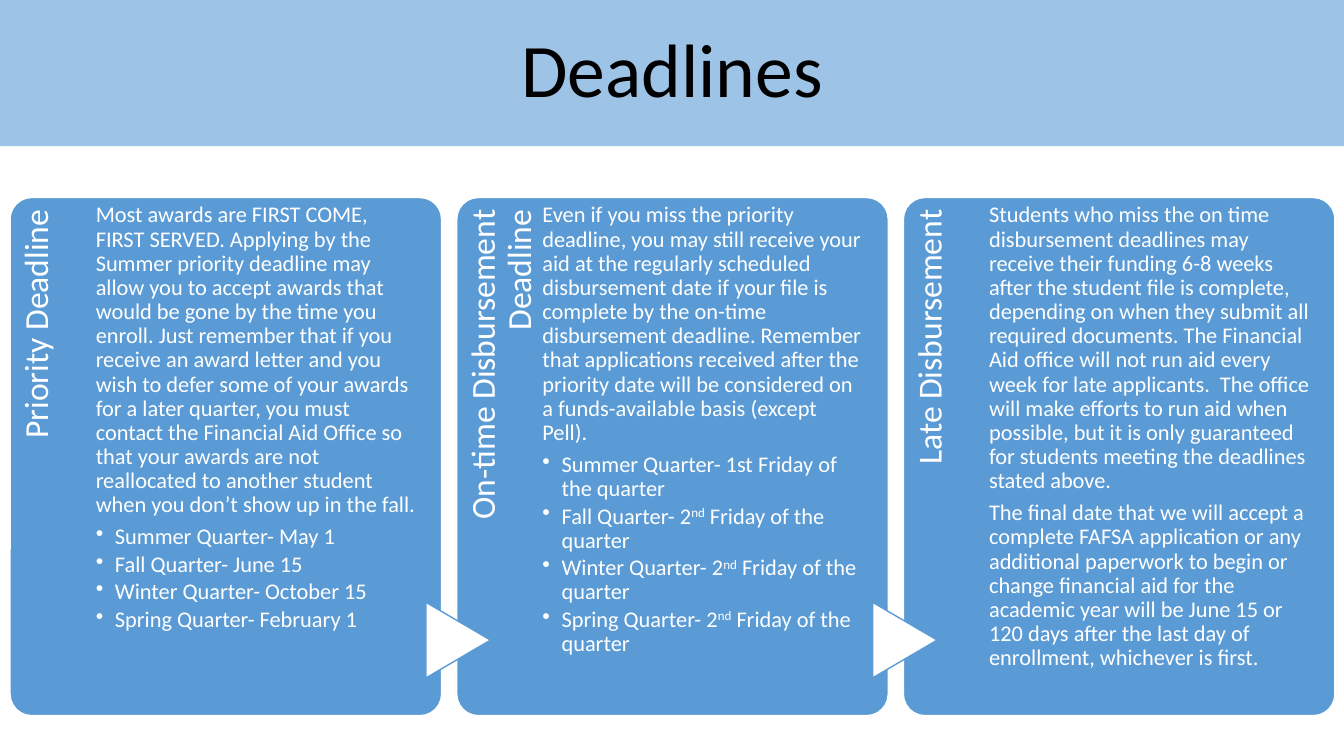
import pptx
import pptx.dml.color
import pptx.enum.shapes
import pptx.enum.text
import pptx.oxml
import pptx.oxml.ns
import pptx.util

PX = 9144
FONT = "Calibri"
BLUE, PALE_BLUE, WHITE, BLACK = "5B9BD5", "9DC3E6", "FFFFFF", "000000"
SHAPE = pptx.enum.shapes.MSO_SHAPE
ALIGN = pptx.enum.text.PP_ALIGN
ANCHOR = pptx.enum.text.MSO_ANCHOR

PANEL_LEFT, PANEL_TOP, PANEL_WIDTH, PANEL_HEIGHT, PANEL_STEP = 10, 196, 428, 514, 443

PANELS = [
    ("Priority Deadline", [
        "Most awards are FIRST COME, FIRST SERVED. Applying by the Summer priority deadline "
        "may allow you to accept awards that would be gone by the time you enroll. Just "
        "remember that if you receive an award letter and you wish to defer some of your "
        "awards for a later quarter, you must contact the Financial Aid Office so that your "
        "awards are not reallocated to another student when you don’t show up in the fall.",
    ], [
        "Summer Quarter- May 1",
        "Fall Quarter- June 15",
        "Winter Quarter- October 15",
        "Spring Quarter- February 1",
    ]),
    ("On-time Disbursement Deadline", [
        "Even if you miss the priority deadline, you may still receive your aid at the "
        "regularly scheduled disbursement date if your file is complete by the on-time "
        "disbursement deadline. Remember that applications received after the priority date "
        "will be considered on a funds-available basis (except Pell).",
    ], [
        "Summer Quarter- 1st Friday of the quarter",
        "Fall Quarter- 2^nd^ Friday of the quarter",
        "Winter Quarter- 2^nd^ Friday of the quarter",
        "Spring Quarter- 2^nd^ Friday of the quarter",
    ]),
    ("Late Disbursement", [
        "Students who miss the on time disbursement deadlines may receive their funding 6-8 "
        "weeks after the student file is complete, depending on when they submit all required "
        "documents. The Financial Aid office will not run aid every week for late applicants.  "
        "The office will make efforts to run aid when possible, but it is only guaranteed for "
        "students meeting the deadlines stated above.",
        "The final date that we will accept a complete FAFSA application or any additional "
        "paperwork to begin or change financial aid for the academic year will be June 15 or "
        "120 days after the last day of enrollment, whichever is first.",
    ], []),
]


def color(value):
    return pptx.dml.color.RGBColor.from_string(value)


def scaled(*lengths):
    return [round(length * PX) for length in lengths]


def write(para, text, size=16, ink=WHITE, align=ALIGN.LEFT, after=0, bullet=False):
    para.alignment = align
    para.line_spacing = 0.9
    para.space_before = pptx.util.Pt(0)
    para.space_after = pptx.util.Pt(after)
    if bullet:
        para.level = 1
        properties = para._p.get_or_add_pPr()
        properties.set("marL", str(19 * PX))
        properties.set("indent", str(-19 * PX))
        mark = pptx.oxml.parse_xml(
            f'<a:buChar {pptx.oxml.ns.nsdecls("a")} char="•"/>')
        properties.append(mark)
    for index, part in enumerate(text.split("^")):
        span = para.add_run()
        span.text = part
        span.font.name = FONT
        span.font.size = pptx.util.Pt(size)
        span.font.color.rgb = color(ink)
        if index % 2:
            span.font._element.set("baseline", "30000")


def add_text_box(page, box, margins):
    text_box = page.shapes.add_textbox(*scaled(*box))
    frame = text_box.text_frame
    frame.word_wrap = True
    frame.vertical_anchor = ANCHOR.TOP
    (frame.margin_left, frame.margin_top,
     frame.margin_right, frame.margin_bottom) = scaled(*margins)
    return text_box


def add_filled_shape(page, kind, box, fill, line):
    shape = page.shapes.add_shape(kind, *scaled(*box))
    shape.shadow.inherit = False
    shape.fill.solid()
    shape.fill.fore_color.rgb = color(fill)
    shape.line.color.rgb = color(line)
    shape.line.width = pptx.util.Pt(1)
    return shape


def add_title(page, box, text):
    title = page.shapes.title
    title.left, title.top, title.width, title.height = scaled(*box)
    title.fill.solid()
    title.fill.fore_color.rgb = color(PALE_BLUE)
    frame = title.text_frame
    frame.auto_size = pptx.enum.text.MSO_AUTO_SIZE.NONE
    frame.word_wrap = True
    frame.vertical_anchor = ANCHOR.MIDDLE
    write(frame.paragraphs[0], text, size=54, ink=BLACK, align=ALIGN.CENTER)


def add_heading(page, box, text):
    left, top, width, height = box
    turned = (left + (width - height) / 2, top + (height - width) / 2, height, width)
    heading = add_text_box(page, turned, (0, 9, 12, 0))
    heading.rotation = 270
    write(heading.text_frame.paragraphs[0], text, size=24, align=ALIGN.RIGHT)


def add_arrow(page, box):
    arrow = add_filled_shape(page, SHAPE.FLOWCHART_EXTRACT, box, WHITE, BLUE)
    arrow.rotation = 90


def add_body(page, box, paragraphs, bullets):
    frame = add_text_box(page, box, (0, 6, 0, 0)).text_frame
    entries = [(text, False) for text in paragraphs] + [(text, True) for text in bullets]
    for index, (text, bullet) in enumerate(entries):
        para = frame.add_paragraph() if index else frame.paragraphs[0]
        write(para, text, after=2.4 if bullet else 5.6, bullet=bullet)


def add_panel(page, box, heading, paragraphs, bullets, has_arrow):
    left, top, width, height = box
    panel = add_filled_shape(page, SHAPE.ROUNDED_RECTANGLE, box, BLUE, WHITE)
    panel.adjustments[0] = 0.05
    add_heading(page, (left, top, 86, 421), heading)
    if has_arrow:
        add_arrow(page, (left - 36, top + 407, 75, 64))
    add_body(page, (left + 85, top, 319, height), paragraphs, bullets)


def build_deadlines(deck):
    page = deck.slides.add_slide(deck.slide_layouts.get_by_name("Title Only"))
    add_title(page, (0, 0, 1333, 145), "Deadlines")
    for index, (heading, paragraphs, bullets) in enumerate(PANELS):
        box = (PANEL_LEFT + index * PANEL_STEP, PANEL_TOP, PANEL_WIDTH, PANEL_HEIGHT)
        add_panel(page, box, heading, paragraphs, bullets, has_arrow=index > 0)


def main():
    deck = pptx.Presentation()
    deck.slide_width, deck.slide_height = scaled(1333, 750)
    build_deadlines(deck)
    deck.save("out.pptx")


if __name__ == "__main__":
    main()
